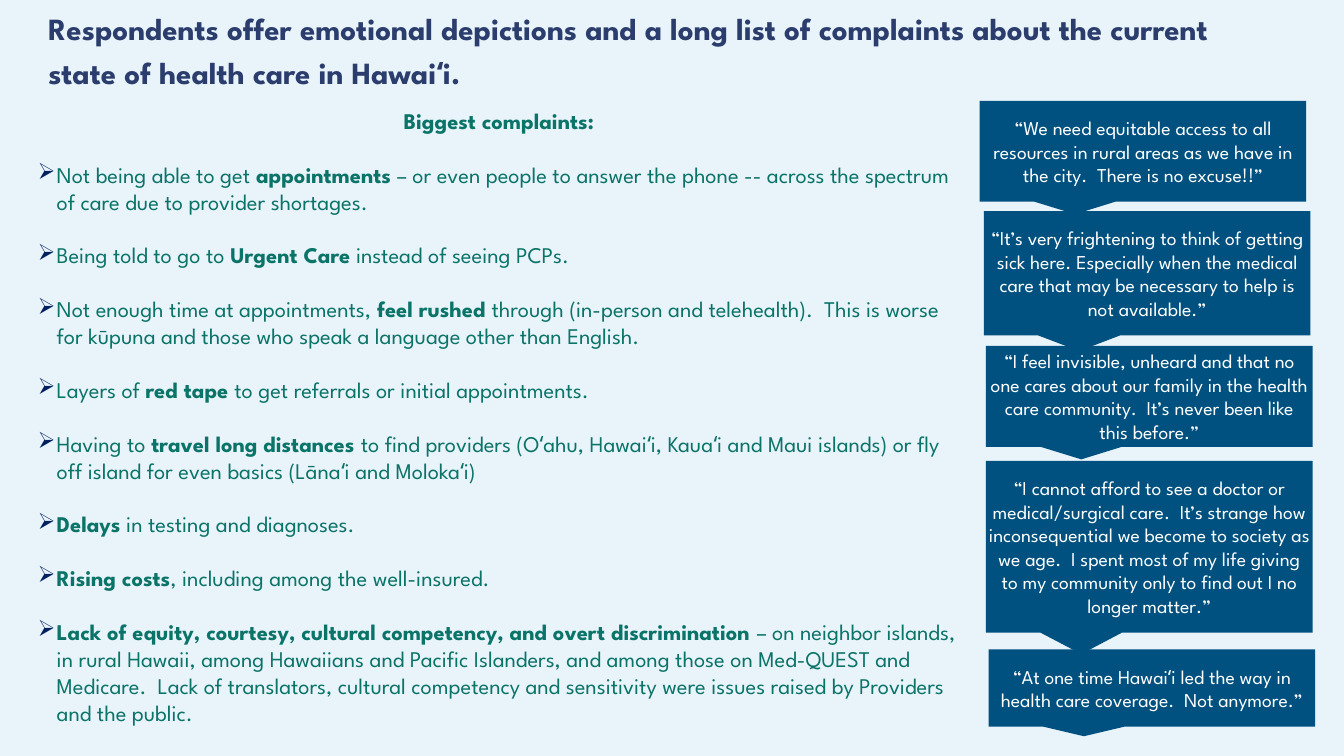
import pptx
import pptx.util
import pptx.dml.color
import pptx.enum.shapes
import pptx.enum.text
import pptx.oxml
import pptx.oxml.ns

RGBColor = pptx.dml.color.RGBColor
Align = pptx.enum.text.PP_ALIGN
Anchor = pptx.enum.text.MSO_ANCHOR
AutoSize = pptx.enum.text.MSO_AUTO_SIZE

EMU_PER_PX = 9525
FONT = "League Spartan"
PALE_BLUE = RGBColor(0xE8, 0xF3, 0xFA)
INDIGO = RGBColor(0x2B, 0x3D, 0x6D)
TEAL = RGBColor(0x0B, 0x74, 0x68)
OCEAN = RGBColor(0x00, 0x51, 0x7F)
NAVY = RGBColor(0x00, 0x20, 0x60)
WHITE = RGBColor(0xFF, 0xFF, 0xFF)

TITLE = ("Respondents offer emotional depictions and a long list of complaints "
         "about the current state of health care in Hawaiʻi.")

# Double asterisks switch bold on and off
COMPLAINTS = [
    "Not being able to get **appointments **– or even people to answer the phone "
    "-- across the spectrum of care due to provider shortages.",
    "Being told to go to **Urgent Care** instead of seeing PCPs.",
    "Not enough time at appointments, **feel rushed **through (in-person and "
    "telehealth).  This is worse for kūpuna and those who speak a language other "
    "than English.",
    "Layers of **red tape **to get referrals or initial appointments.",
    "Having to **travel long distances **to find providers (Oʻahu, Hawaiʻi, Kauaʻi "
    "and Maui islands) or fly off island for even basics (Lānaʻi and Molokaʻi)",
    "**Delays** in testing and diagnoses.",
    "**Rising costs**, including among the well-insured.",
    "**Lack of equity, courtesy, cultural competency, and overt discrimination **"
    "– on neighbor islands, in rural Hawaii, among Hawaiians and Pacific Islanders, "
    "and among those on Med-QUEST and Medicare.  Lack of translators, cultural "
    "competency and sensitivity were issues raised by Providers and the public.",
]

# Left offset, top offset and height within the quote column, then the quote
QUOTES = [
    (0, 0, 192, "“We need equitable access to all resources in rural areas as we "
     "have in the city.  There is no excuse!!”"),
    (8, 210, 237, "“It’s very frightening to think of getting sick here. Especially "
     "when the medical care that may be necessary to help is not available.”"),
    (12, 467, 192, "“I feel invisible, unheard and that no one cares about our family "
     "in the health care community.  It’s never been like this before.”"),
    (12, 686, 327, "“I cannot afford to see a doctor or medical/surgical care.  It’s "
     "strange how inconsequential we become to society as we age.  I spent most of "
     "my life giving to my community only to find out I no longer matter.”"),
    (17, 1045, 147, "“At one time Hawaiʻi led the way in health care coverage.  "
     "Not anymore.”"),
]


def px(length):
    return pptx.util.Emu(length * EMU_PER_PX)


def add_bullet(paragraph, indent):
    properties = paragraph._p.get_or_add_pPr()
    properties.set("marL", str(px(indent)))
    properties.set("indent", str(px(-indent)))
    namespace = pptx.oxml.ns.nsdecls("a")
    # Wingdings draws Ø as an arrowhead
    for xml in (f'<a:buClr {namespace}><a:srgbClr val="{NAVY}"/></a:buClr>',
                f'<a:buFont {namespace} typeface="Wingdings" pitchFamily="2" charset="2"/>',
                f'<a:buChar {namespace} char="Ø"/>'):
        properties.append(pptx.oxml.parse_xml(xml))


def write(paragraph, text, *, size, color, bold=False, align=Align.LEFT,
          line_spacing=None, space_before=None, bullet_indent=None):
    paragraph.alignment = align
    if line_spacing:
        paragraph.line_spacing = line_spacing
    if space_before:
        paragraph.space_before = pptx.util.Pt(space_before)
    if bullet_indent:
        add_bullet(paragraph, bullet_indent)
    for index, part in enumerate(text.split("**")):
        if part:
            run = paragraph.add_run()
            run.text = part
            run.font.name = FONT
            run.font.size = pptx.util.Pt(size)
            run.font.bold = bold or index % 2 == 1
            run.font.color.rgb = color


def prepare_frame(shape, horizontal, vertical, anchor, auto_size):
    frame = shape.text_frame
    frame.word_wrap = True
    frame.auto_size = auto_size
    frame.vertical_anchor = anchor
    frame.margin_left = frame.margin_right = px(horizontal)
    frame.margin_top = frame.margin_bottom = px(vertical)
    return frame


def add_title(slide, left, top, width, height):
    box = slide.shapes.add_textbox(px(left), px(top), px(width), px(height))
    frame = prepare_frame(box, 10, 5, Anchor.TOP, AutoSize.NONE)
    write(frame.paragraphs[0], TITLE, size=44, color=INDIGO, bold=True, line_spacing=1.2)


def add_complaints(slide, left, top, width, height):
    box = slide.shapes.add_textbox(px(left), px(top), px(width), px(height))
    frame = prepare_frame(box, 6, 6, Anchor.MIDDLE, AutoSize.SHAPE_TO_FIT_TEXT)
    write(frame.paragraphs[0], "Biggest complaints:", size=32, color=TEAL,
          bold=True, align=Align.CENTER)
    for complaint in COMPLAINTS:
        write(frame.add_paragraph(), complaint, size=32, color=TEAL,
              space_before=38.4, bullet_indent=36)


def add_quotes(slide, left, top, width):
    for offset_x, offset_y, height, quote in QUOTES:
        callout = slide.shapes.add_shape(
            pptx.enum.shapes.MSO_SHAPE.RECTANGULAR_CALLOUT,
            px(left + offset_x), px(top + offset_y), px(width), px(height))
        callout.adjustments[0] = -0.208
        callout.adjustments[1] = 0.625
        callout.shadow.inherit = False
        callout.fill.solid()
        callout.fill.fore_color.rgb = OCEAN
        callout.line.fill.background()
        frame = prepare_frame(callout, 5, 6, Anchor.MIDDLE, AutoSize.SHAPE_TO_FIT_TEXT)
        write(frame.paragraphs[0], quote, size=28, color=WHITE, align=Align.CENTER)


def main():
    presentation = pptx.Presentation()
    presentation.slide_width = px(2560)
    presentation.slide_height = px(1440)
    slide = presentation.slides.add_slide(presentation.slide_layouts[6])
    slide.background.fill.solid()
    slide.background.fill.fore_color.rgb = PALE_BLUE

    add_title(slide, 82, -1, 2307, 196)
    add_quotes(slide, 1866, 192, 622)
    add_complaints(slide, 66, 193, 1769, 1200)

    presentation.save("out.pptx")


if __name__ == "__main__":
    main()
